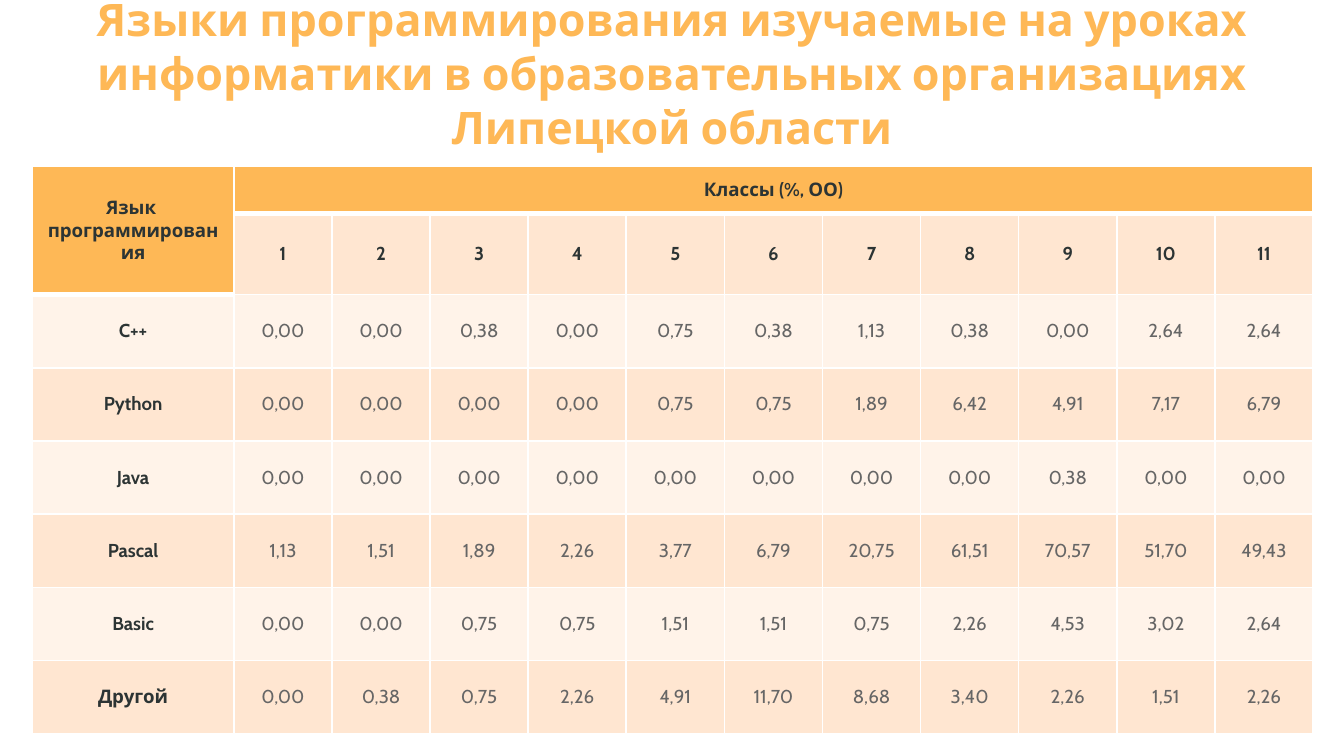
import pptx
import pptx.util
import pptx.dml.color
import pptx.enum.text
import pptx.oxml.ns
import lxml.etree

Inches = pptx.util.Inches
Pt = pptx.util.Pt

FONT = "Cabin"
ORANGE, PEACH, CREAM = "FEB856", "FFE6D1", "FFF3E9"
DARK, GRAY, WHITE = "2C3434", "666666", "FFFFFF"

TITLE = ("Языки программирования изучаемые на уроках "
         "информатики в образовательных организациях Липецкой области")
HEADER = "Язык \nпрограммирования"
CLASSES_HEADER = "Классы (%, ОО)"
SHARES = {
    "C++": "0,00 0,00 0,38 0,00 0,75 0,38 1,13 0,38 0,00 2,64 2,64",
    "Python": "0,00 0,00 0,00 0,00 0,75 0,75 1,89 6,42 4,91 7,17 6,79",
    "Java": "0,00 0,00 0,00 0,00 0,00 0,00 0,00 0,00 0,38 0,00 0,00",
    "Pascal": "1,13 1,51 1,89 2,26 3,77 6,79 20,75 61,51 70,57 51,70 49,43",
    "Basic": "0,00 0,00 0,75 0,75 1,51 1,51 0,75 2,26 4,53 3,02 2,64",
    "Другой": "0,00 0,38 0,75 2,26 4,91 11,70 8,68 3,40 2,26 1,51 2,26",
}
CLASS_COUNT = 11


def rgb(value):
    return pptx.dml.color.RGBColor.from_string(value)


def write_text(frame, text, size=10, color=DARK, bold=True):
    """Write one centred paragraph for each line of text."""
    frame.word_wrap = True
    for index, line in enumerate(text.split("\n")):
        paragraph = frame.add_paragraph() if index else frame.paragraphs[0]
        paragraph.alignment = pptx.enum.text.PP_ALIGN.CENTER
        run = paragraph.add_run()
        run.text = line
        run.font.name = FONT
        run.font.size = Pt(size)
        run.font.bold = bold
        run.font.color.rgb = rgb(color)


def set_borders(cell, bottom=1):
    """Draw white borders, 1 pt wide except for the bottom one."""
    properties = cell._tc.get_or_add_tcPr()
    qn = pptx.oxml.ns.qn
    widths = {"lnL": 1, "lnR": 1, "lnT": 1, "lnB": bottom}
    for index, (side, width) in enumerate(widths.items()):
        line = lxml.etree.Element(qn("a:" + side), w=str(Pt(width)))
        fill = lxml.etree.SubElement(line, qn("a:solidFill"))
        lxml.etree.SubElement(fill, qn("a:srgbClr"), val=WHITE)
        properties.insert(index, line)


def format_cell(cell, fill, bottom=1):
    cell.fill.solid()
    cell.fill.fore_color.rgb = rgb(fill)
    cell.vertical_anchor = pptx.enum.text.MSO_ANCHOR.MIDDLE
    set_borders(cell, bottom)


def add_title(slide, left, top, width, height):
    box = slide.shapes.add_textbox(Inches(left), Inches(top), Inches(width), Inches(height))
    box.text_frame.vertical_anchor = pptx.enum.text.MSO_ANCHOR.MIDDLE
    write_text(box.text_frame, TITLE, size=24, color=ORANGE)


def fill_header(table):
    for column in range(CLASS_COUNT + 1):
        format_cell(table.cell(0, column), ORANGE, bottom=3)
        if column:
            format_cell(table.cell(1, column), PEACH)
            write_text(table.cell(1, column).text_frame, str(column))
    format_cell(table.cell(1, 0), ORANGE, bottom=3)
    table.cell(0, 0).merge(table.cell(1, 0))
    table.cell(0, 1).merge(table.cell(0, CLASS_COUNT))
    write_text(table.cell(0, 0).text_frame, HEADER)
    write_text(table.cell(0, 1).text_frame, CLASSES_HEADER)


def fill_shares(table):
    for row, (language, shares) in enumerate(SHARES.items(), start=2):
        for column, text in enumerate([language, *shares.split()]):
            cell = table.cell(row, column)
            format_cell(cell, PEACH if row % 2 else CREAM)
            if column:
                cell.margin_left = cell.margin_right = Inches(0.07)
                cell.margin_top = cell.margin_bottom = 0
                write_text(cell.text_frame, text, color=GRAY, bold=False)
            else:
                write_text(cell.text_frame, text)


def add_language_table(slide, left, top, width, height):
    frame = slide.shapes.add_table(len(SHARES) + 2, CLASS_COUNT + 1, Inches(left),
                                   Inches(top), Inches(width), Inches(height))
    table = frame.table
    name_width, header_heights = 1.5, [0.35, 0.31]
    class_width = (width - name_width) / CLASS_COUNT
    share_height = (height - sum(header_heights)) / len(SHARES)
    for column, column_width in zip(table.columns, [name_width] + [class_width] * CLASS_COUNT):
        column.width = Inches(column_width)
    for row, row_height in zip(table.rows, header_heights + [share_height] * len(SHARES)):
        row.height = Inches(row_height)
    fill_header(table)
    fill_shares(table)


def main():
    presentation = pptx.Presentation()
    presentation.slide_width = Inches(10)
    presentation.slide_height = Inches(10 * 9 / 16)
    slide = presentation.slides.add_slide(presentation.slide_layouts[6])
    add_title(slide, 0, 0.03, 10, 1.02)
    add_language_table(slide, 0.24, 1.24, 9.53, 3.93)
    presentation.save("out.pptx")


if __name__ == "__main__":
    main()
